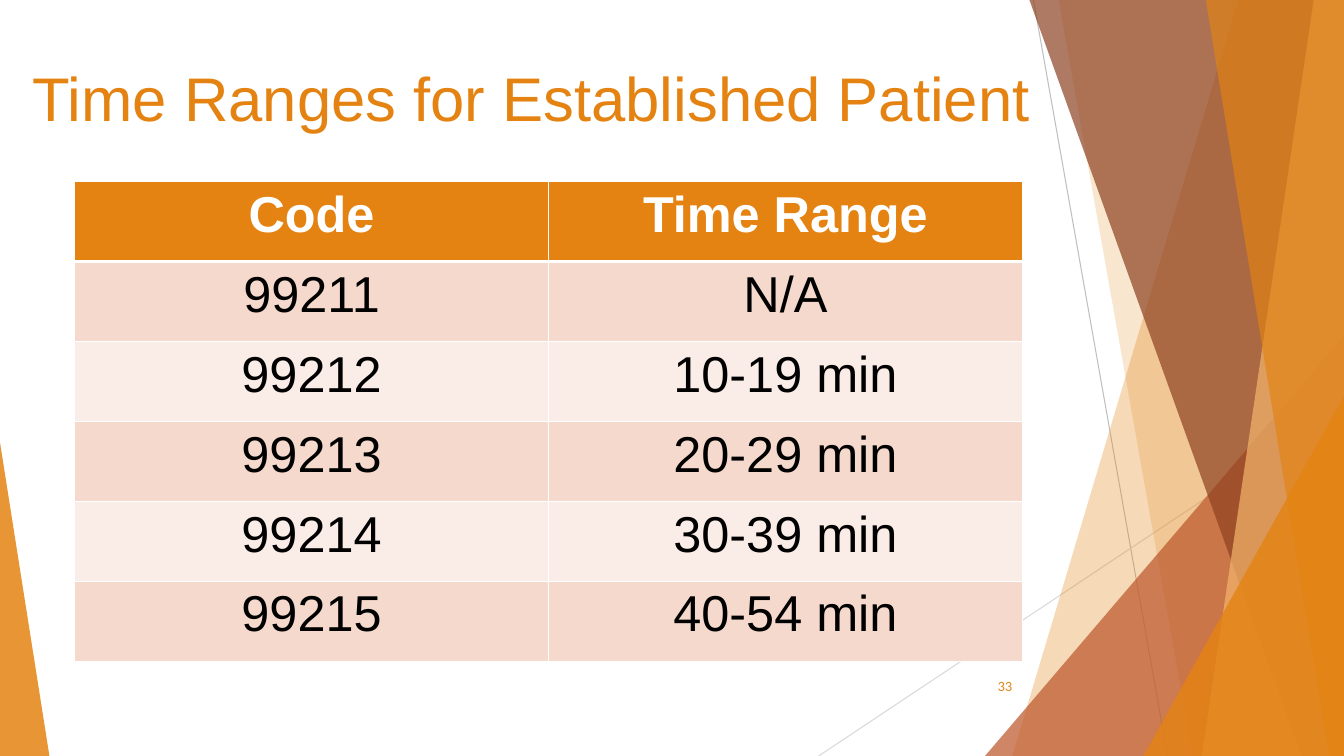
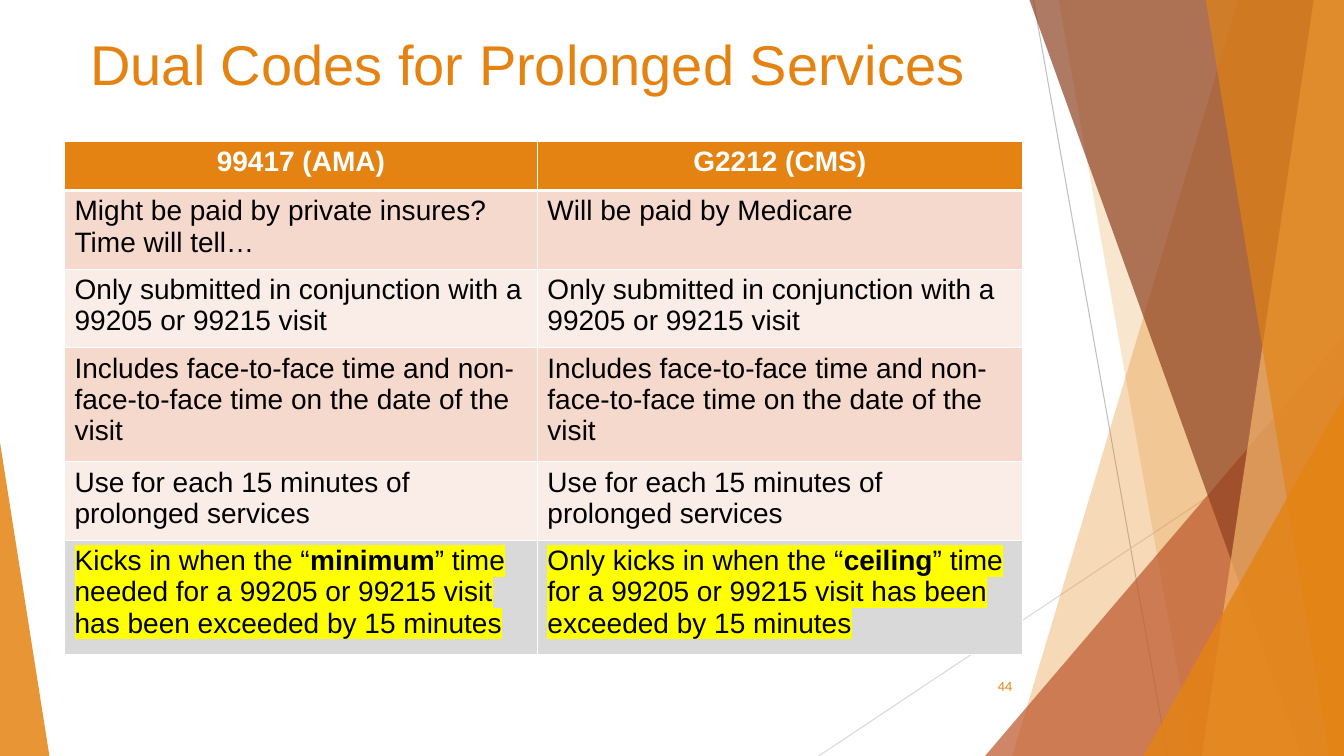
from dataclasses import dataclass

from lxml import etree
from pptx import Presentation
from pptx.dml.color import RGBColor
from pptx.enum.shapes import MSO_CONNECTOR, MSO_SHAPE
from pptx.enum.text import MSO_ANCHOR, PP_ALIGN
from pptx.oxml.ns import qn
from pptx.shapes.base import BaseShape
from pptx.slide import Slide
from pptx.table import _Cell
from pptx.util import Inches, Pt

STRAIGHT = MSO_CONNECTOR.STRAIGHT
TRIANGLE = MSO_SHAPE.ISOSCELES_TRIANGLE
TOP, MIDDLE = MSO_ANCHOR.TOP, MSO_ANCHOR.MIDDLE
LEFT, CENTER, RIGHT = PP_ALIGN.LEFT, PP_ALIGN.CENTER, PP_ALIGN.RIGHT

ORANGE = RGBColor(0xE4, 0x83, 0x12)
LIGHT_ORANGE = RGBColor(0xF3, 0xB5, 0x6C)
RUST = RGBColor(0xBD, 0x58, 0x2C)
BROWN = RGBColor(0x8E, 0x42, 0x21)
ROW_DARK = RGBColor(0xF5, 0xD9, 0xCC)
ROW_LIGHT = RGBColor(0xFA, 0xED, 0xE7)
GREY = RGBColor(0xBF, 0xBF, 0xBF)
LIGHT_GREY = RGBColor(0xD9, 0xD9, 0xD9)
YELLOW = RGBColor(0xFF, 0xFF, 0x00)
WHITE = RGBColor(0xFF, 0xFF, 0xFF)
BLACK = RGBColor(0x00, 0x00, 0x00)

TEXT_FONT, NUMBER_FONT = "Arial", "Lato"
SLIDE_WIDTH, SLIDE_HEIGHT = 13.33, 7.5


@dataclass(frozen=True)
class Box:
    left: float
    top: float
    width: float
    height: float


@dataclass(frozen=True)
class Line:
    start: tuple[float, float]
    end: tuple[float, float]
    color: RGBColor


@dataclass(frozen=True)
class Band:
    """Full-height area from a slanted left edge to the slide's right edge."""
    top_x: float
    bottom_x: float
    color: RGBColor
    opacity: int


@dataclass(frozen=True)
class Wedge:
    """Right-angled triangle standing on the slide's bottom edge."""
    left: float
    top: float
    width: float
    apex: float
    color: RGBColor
    opacity: int


@dataclass(frozen=True)
class TableSlide:
    title: str
    title_box: Box
    title_size: int
    number: int
    table_left: float
    table_top: float
    columns: list[float]
    row_heights: list[float]
    text_size: int
    body_alignment: PP_ALIGN
    rows: list[tuple[str, str]]  # text between ** marks is bold
    highlight_last: bool = False


# Decoration shared by both slides, from back to front
DECORATION = [
    Line((10.25, 0), (11.58, SLIDE_HEIGHT), GREY),
    Line((SLIDE_WIDTH, 4.03), (8.12, SLIDE_HEIGHT), LIGHT_GREY),
    Band(12.28, 10.04, ORANGE, 30),
    Band(10.5, 11.83, ORANGE, 20),
    Wedge(9.77, 3.33, 3.56, 1, RUST, 72),
    Band(10.21, 12.91, BROWN, 70),
    Band(13.03, 11.92, LIGHT_ORANGE, 70),
    Band(11.96, 13.18, ORANGE, 65),
    Wedge(11.34, 3.93, 1.99, 1, ORANGE, 80),
    Wedge(0, 4.39, 0.49, 0, ORANGE, 85),
]
NUMBER_BOX = Box(9.39, 6.61, 0.75, 0.4)

CONJUNCTION = "Only submitted in conjunction with a 99205 or 99215 visit"
INCLUDES = "Includes face-to-face time and non-face-to-face time on the date of the visit"
EACH_15 = "Use for each 15 minutes of prolonged services"

SLIDES = [
    TableSlide(
        "Time Ranges for Established Patient", Box(0.1, 0.55, 10.35, 1.56), 44, 33,
        0.74, 1.8, [4.7] * 2, [4.76 / 6] * 6, 36, CENTER,
        [
            ("Code", "Time Range"),
            ("99211", "N/A"),
            ("99212", "10-19 min"),
            ("99213", "20-29 min"),
            ("99214", "30-39 min"),
            ("99215", "40-54 min"),
        ],
    ),
    TableSlide(
        "Dual Codes for Prolonged Services", Box(0.32, 0.24, 9.82, 1.61), 40, 44,
        0.64, 1.4, [4.69, 4.81], [0.49, 0.78, 0.78, 1.13, 0.78, 1.13], 20, LEFT,
        [
            ("99417 (AMA)", "G2212 (CMS)"),
            ("Might be paid by private insures? Time will tell…", "Will be paid by Medicare"),
            (CONJUNCTION, CONJUNCTION),
            (INCLUDES, INCLUDES),
            (EACH_15, EACH_15),
            (
                "Kicks in when the “**minimum**” time needed for a 99205 or 99215 visit "
                "has been exceeded by 15 minutes",
                "Only kicks in when the “**ceiling**” time for a 99205 or 99215 visit "
                "has been exceeded by 15 minutes",
            ),
        ],
        highlight_last=True,
    ),
]


def paint(shape: BaseShape, color: RGBColor, opacity: int) -> None:
    shape.shadow.inherit = False
    shape.line.fill.background()
    shape.fill.solid()
    shape.fill.fore_color.rgb = color
    color_element = shape.element.spPr.find(qn("a:solidFill")).find(qn("a:srgbClr"))
    etree.SubElement(color_element, qn("a:alpha"), val=str(opacity * 1000))


def draw_line(slide: Slide, line: Line) -> None:
    points = [Inches(value) for value in (*line.start, *line.end)]
    connector = slide.shapes.add_connector(STRAIGHT, *points)
    connector.line.color.rgb = line.color
    connector.line.width = Pt(0.75)
    etree.SubElement(connector.element.spPr, qn("a:effectLst"))


def draw_band(slide: Slide, band: Band) -> None:
    builder = slide.shapes.build_freeform(Inches(band.top_x), 0)
    corners = [(SLIDE_WIDTH, 0), (SLIDE_WIDTH, SLIDE_HEIGHT), (band.bottom_x, SLIDE_HEIGHT)]
    builder.add_line_segments([(Inches(x), Inches(y)) for x, y in corners], close=True)
    paint(builder.convert_to_shape(), band.color, band.opacity)


def draw_wedge(slide: Slide, wedge: Wedge) -> None:
    shape = slide.shapes.add_shape(
        TRIANGLE, Inches(wedge.left), Inches(wedge.top),
        Inches(wedge.width), Inches(SLIDE_HEIGHT - wedge.top),
    )
    shape.adjustments[0] = wedge.apex
    paint(shape, wedge.color, wedge.opacity)


def draw_decoration(slide: Slide) -> None:
    painters = {Line: draw_line, Band: draw_band, Wedge: draw_wedge}
    for part in DECORATION:
        painters[type(part)](slide, part)


def add_text(slide: Slide, box: Box, text: str, font_name: str, size: int,
             alignment: PP_ALIGN, anchor: MSO_ANCHOR) -> None:
    shape = slide.shapes.add_textbox(
        Inches(box.left), Inches(box.top), Inches(box.width), Inches(box.height)
    )
    frame = shape.text_frame
    frame.word_wrap = True
    frame.vertical_anchor = anchor
    paragraph = frame.paragraphs[0]
    paragraph.text = text
    paragraph.alignment = alignment
    paragraph.font.name = font_name
    paragraph.font.size = Pt(size)
    paragraph.font.color.rgb = ORANGE


def set_borders(cell: _Cell, row_index: int) -> None:
    widths = {"L": 1, "R": 1, "T": 3 if row_index == 1 else 1, "B": 3 if row_index == 0 else 1}
    properties = cell._tc.get_or_add_tcPr()
    for side, width in widths.items():
        border = etree.SubElement(properties, qn(f"a:ln{side}"), w=str(Pt(width)))
        fill = etree.SubElement(border, qn("a:solidFill"))
        etree.SubElement(fill, qn("a:srgbClr"), val=str(WHITE))


def fill_cell(cell: _Cell, text: str, row_index: int, content: TableSlide) -> None:
    is_header = row_index == 0
    highlighted = content.highlight_last and row_index == len(content.rows) - 1
    set_borders(cell, row_index)
    cell.fill.solid()
    if is_header:
        cell.fill.fore_color.rgb = ORANGE
    elif highlighted:
        cell.fill.fore_color.rgb = LIGHT_GREY
    else:
        cell.fill.fore_color.rgb = ROW_DARK if row_index % 2 else ROW_LIGHT

    paragraph = cell.text_frame.paragraphs[0]
    paragraph.alignment = CENTER if is_header else content.body_alignment
    paragraph.font.name = TEXT_FONT
    paragraph.font.size = Pt(content.text_size)
    paragraph.font.color.rgb = WHITE if is_header else BLACK
    for index, piece in enumerate(text.split("**")):
        run = paragraph.add_run()
        run.text = piece
        run.font.bold = is_header or index % 2 == 1
        if highlighted:
            highlight = etree.SubElement(run._r.get_or_add_rPr(), qn("a:highlight"))
            etree.SubElement(highlight, qn("a:srgbClr"), val=str(YELLOW))


def add_code_table(slide: Slide, content: TableSlide) -> None:
    frame = slide.shapes.add_table(
        len(content.rows), len(content.columns),
        Inches(content.table_left), Inches(content.table_top),
        Inches(sum(content.columns)), Inches(sum(content.row_heights)),
    )
    table = frame.table
    for column, width in zip(table.columns, content.columns):
        column.width = Inches(width)
    for row, height in zip(table.rows, content.row_heights):
        row.height = Inches(height)
    for row_index, texts in enumerate(content.rows):
        for column_index, text in enumerate(texts):
            fill_cell(table.cell(row_index, column_index), text, row_index, content)


def main() -> None:
    presentation = Presentation()
    presentation.slide_width = Inches(SLIDE_WIDTH)
    presentation.slide_height = Inches(SLIDE_HEIGHT)
    blank_layout = presentation.slide_layouts[6]
    for content in SLIDES:
        slide = presentation.slides.add_slide(blank_layout)
        draw_decoration(slide)
        add_text(slide, content.title_box, content.title, TEXT_FONT,
                 content.title_size, CENTER, TOP)
        add_code_table(slide, content)
        add_text(slide, NUMBER_BOX, str(content.number), NUMBER_FONT, 9, RIGHT, MIDDLE)
    presentation.save("out.pptx")


if __name__ == "__main__":
    main()
